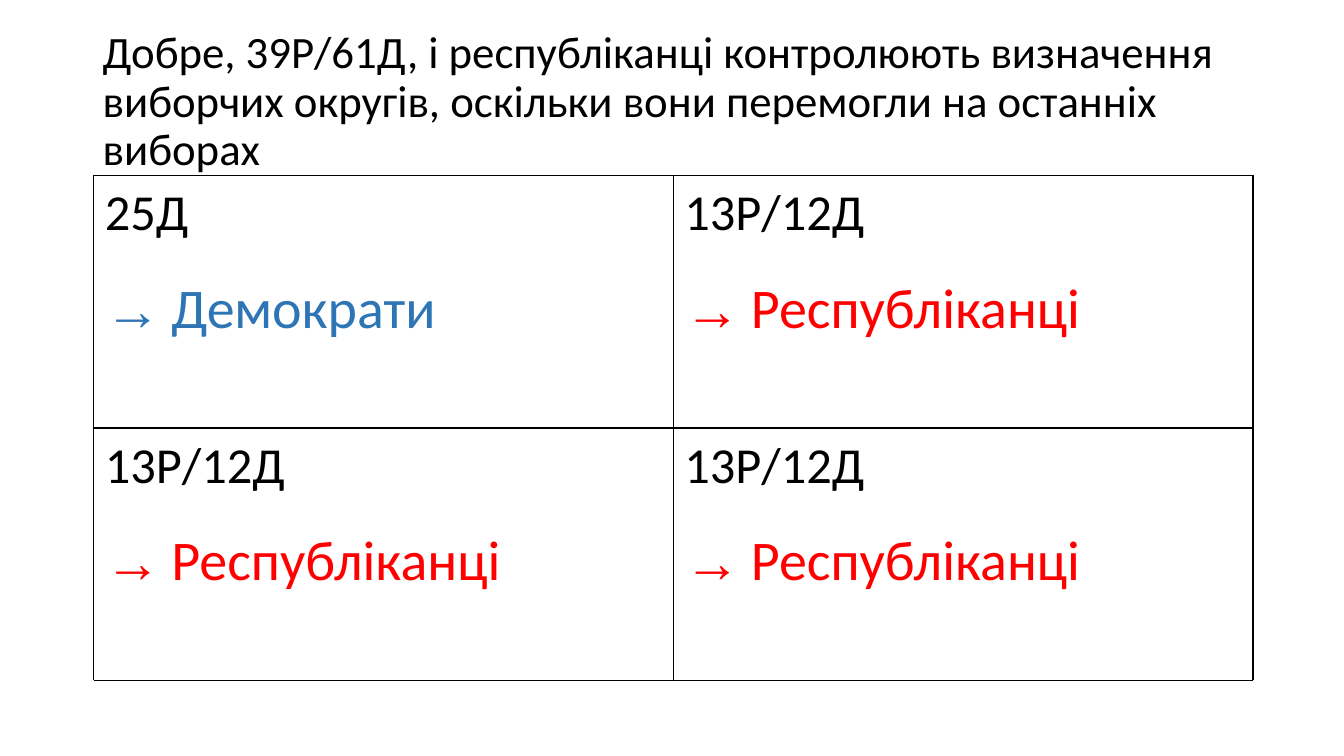
from dataclasses import dataclass

from lxml.etree import SubElement
from pptx import Presentation
from pptx.dml.color import RGBColor
from pptx.enum.shapes import MSO_CONNECTOR as Connector
from pptx.enum.text import MSO_ANCHOR as Anchor
from pptx.oxml.ns import qn
from pptx.slide import Slide
from pptx.util import Inches, Pt

COLORS = {"ink": "000000", "dem": "2E75B6", "rep": "FF0000"}
WINNERS = {"dem": "Демократи", "rep": "Республіканці"}

# Grid of districts, in inches
LEFT, TOP = 0.93, 1.74
COL_W, ROW_H = 5.75, 2.505
COLS, ROWS = 2, 2


@dataclass(frozen=True)
class District:
    col: int
    row: int
    votes: str
    winner: str


DISTRICTS = [
    District(0, 0, "25Д", "dem"),
    District(1, 0, "13Р/12Д", "rep"),
    District(0, 1, "13Р/12Д", "rep"),
    District(1, 1, "13Р/12Д", "rep"),
]


def grid_x(col: float) -> float:
    return LEFT + col * COL_W


def grid_y(row: float) -> float:
    return TOP + row * ROW_H


def add_text(s: Slide, text: str, x: float, y: float, w: float, h: float, *,
             size: float, color: str = "ink", font: str = "Calibri",
             wrap: bool = False, inset: tuple[float, float] = (0, 0),
             anchor: Anchor = Anchor.TOP, spacing: float = 1.0) -> None:
    sp = s.shapes.add_textbox(Inches(x), Inches(y), Inches(w), Inches(h))
    tf = sp.text_frame
    tf.word_wrap = wrap
    tf.vertical_anchor = anchor
    tf.margin_left = tf.margin_right = Inches(inset[0])
    tf.margin_top = tf.margin_bottom = Inches(inset[1])
    p = tf.paragraphs[0]
    p.line_spacing = spacing
    r = p.add_run()
    r.text = text
    r.font.name = font
    r.font.size = Pt(size)
    r.font.color.rgb = RGBColor.from_string(COLORS[color])


def add_rule(s: Slide, x1: float, y1: float, x2: float, y2: float) -> None:
    sp = s.shapes.add_connector(Connector.STRAIGHT, Inches(x1), Inches(y1),
                                Inches(x2), Inches(y2))
    sp.line.color.rgb = RGBColor.from_string(COLORS["ink"])
    sp.line.width = Pt(1)
    SubElement(sp.element.spPr, qn("a:effectLst"))


def add_district(s: Slide, d: District) -> None:
    x, y = grid_x(d.col) + 0.11, grid_y(d.row) + 0.05
    add_text(s, d.votes, x, y, 1.8, 0.61, size=36)
    add_text(s, "→", x, y + 0.93, 0.6, 0.73, size=40, color=d.winner, font="Arial")
    add_text(s, WINNERS[d.winner], x + 0.66, y + 0.91, 3.3, 0.67,
             size=40, color=d.winner)


def main() -> None:
    prs = Presentation()
    prs.slide_width, prs.slide_height = Inches(13.333), Inches(7.5)
    s = prs.slides.add_slide(prs.slide_layouts[6])

    # Title
    add_text(s, "Добре, 39Р/61Д, і республіканці контролюють визначення виборчих "
                "округів, оскільки вони перемогли на останніх виборах",
             0.92, 0.4, 11.5, 1.24, size=32, wrap=True, inset=(0.1, 0.05),
             anchor=Anchor.MIDDLE, spacing=0.9)

    # District borders
    for col in range(COLS + 1):
        add_rule(s, grid_x(col), grid_y(0), grid_x(col), grid_y(ROWS))
    for row in range(ROWS + 1):
        add_rule(s, grid_x(0), grid_y(row), grid_x(COLS), grid_y(row))

    # Votes and winners
    for d in DISTRICTS:
        add_district(s, d)

    prs.save("out.pptx")


if __name__ == "__main__":
    main()
